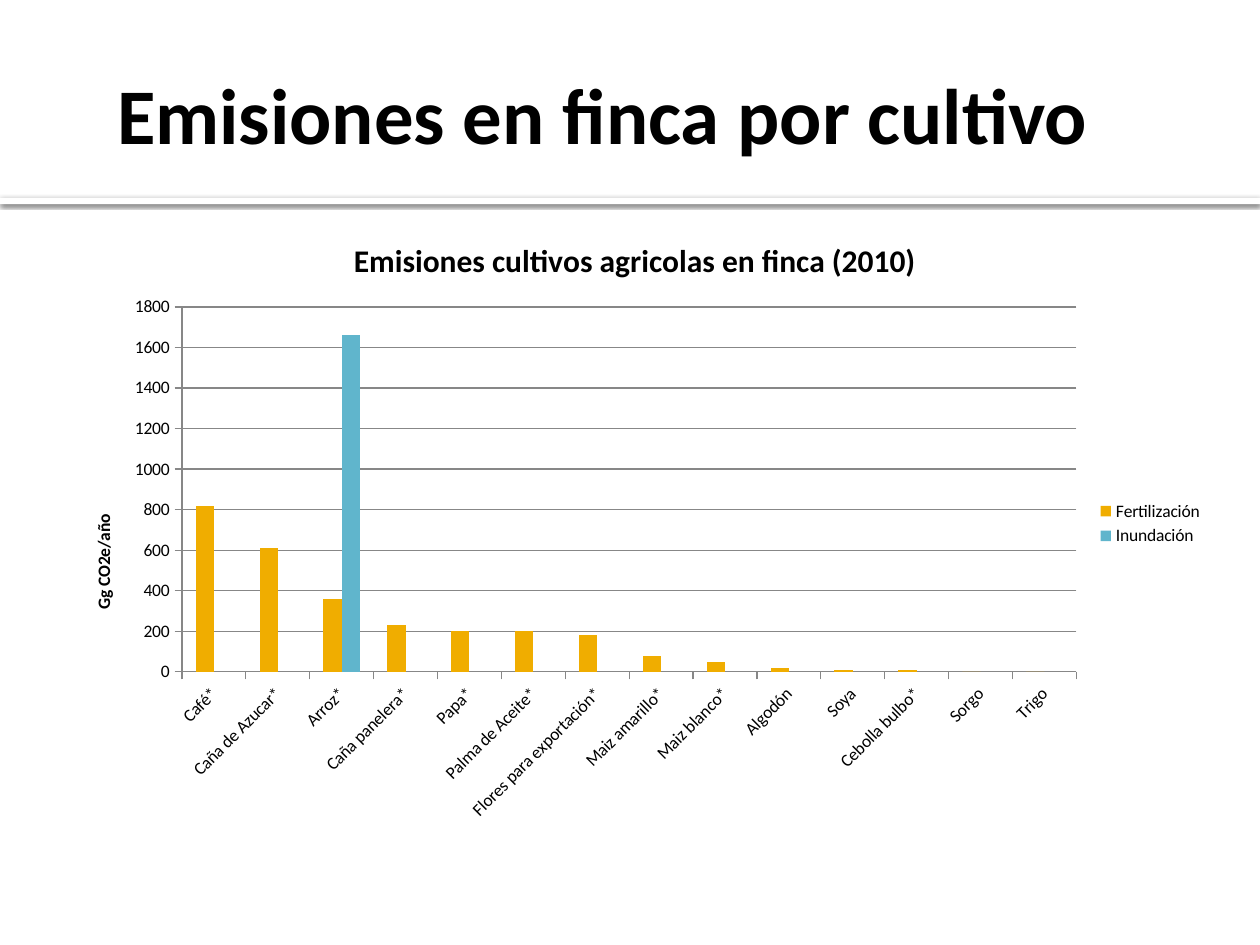
from typing import NamedTuple, Optional

from lxml import etree
from pptx import Presentation
from pptx.chart.data import CategoryChartData
from pptx.dml.color import RGBColor
from pptx.enum.chart import XL_CHART_TYPE, XL_LEGEND_POSITION, XL_TICK_MARK
from pptx.enum.shapes import MSO_SHAPE
from pptx.enum.text import MSO_ANCHOR, PP_ALIGN
from pptx.oxml import parse_xml
from pptx.oxml.ns import nsdecls, qn
from pptx.util import Inches, Pt

COLUMNS = XL_CHART_TYPE.COLUMN_CLUSTERED
RIGHT = XL_LEGEND_POSITION.RIGHT
OUTSIDE = XL_TICK_MARK.OUTSIDE
FONT = "Calibri"
BLACK, WHITE, GRAY = "000000", "FFFFFF", "878787"


class Series(NamedTuple):
    name: str
    values: list[Optional[int]]
    color: str


CROPS = ["Café*", "Caña de Azucar*", "Arroz*", "Caña panelera*", "Papa*",
         "Palma de Aceite*", "Flores para exportación*", "Maiz amarillo*",
         "Maiz blanco*", "Algodón", "Soya", "Cebolla bulbo*", "Sorgo", "Trigo"]
SERIES = [
    Series("Fertilización",
           [820, 610, 360, 230, 200, 200, 180, 80, 50, 20, 10, 10, 0, 0], "F0AD00"),
    Series("Inundación",
           [1660 if crop == "Arroz*" else None for crop in CROPS], "60B5CC"),
]


def rgb(color: str) -> RGBColor:
    return RGBColor.from_string(color)


def style(font, size: float, bold: bool = False) -> None:
    font.name = FONT
    font.size = Pt(size)
    font.bold = bold
    font.color.rgb = rgb(BLACK)


def set_title(owner, text: str, size: float) -> None:
    """Give a chart or an axis its bold title."""
    owner.has_title = True
    title = owner.chart_title if hasattr(owner, "chart_title") else owner.axis_title
    p = title.text_frame.paragraphs[0]
    p.text = text
    style(p.runs[0].font, size, bold=True)


def place(parent, previous=None, **lengths) -> None:
    """Set a manual layout, in fractions of the chart, after the previous child."""
    old = parent.find(qn("c:layout"))
    if old is not None:
        parent.remove(old)
    layout = parse_xml(f"<c:layout {nsdecls('c')}><c:manualLayout/></c:layout>")
    for tag, value in lengths.items():
        etree.SubElement(layout[0], qn(f"c:{tag}")).set("val", str(value))
    if previous is None:
        parent.insert(0, layout)
    else:
        previous.addnext(layout)


def add_band(s) -> None:
    """Draw the white strip whose shadow separates title and chart."""
    sp = s.shapes.add_shape(MSO_SHAPE.RECTANGLE, 0, Inches(1.57), Inches(10), Inches(0.05))
    sp.fill.solid()
    sp.fill.fore_color.rgb = rgb(WHITE)
    sp.line.fill.background()
    sp.shadow.inherit = False
    effects = sp._element.spPr.find(qn("a:effectLst"))
    effects.append(parse_xml(
        f'<a:outerShdw {nsdecls("a")} blurRad="{Pt(2.5)}" dist="{Pt(0.8)}" dir="5400000" '
        'algn="t" rotWithShape="0"><a:srgbClr val="000000"><a:alpha val="60000"/>'
        '</a:srgbClr></a:outerShdw>'))


def add_title(s) -> None:
    sp = s.shapes.title
    sp.left, sp.top, sp.width, sp.height = map(Inches, (0.83, 0.21, 8.17, 1.37))
    tf = sp.text_frame
    tf.text = "Emisiones en finca por cultivo"
    tf.word_wrap = True
    tf.vertical_anchor = MSO_ANCHOR.MIDDLE
    tf.margin_left = Inches(0.1)
    tf.margin_top = tf.margin_right = tf.margin_bottom = Inches(0.05)
    p = tf.paragraphs[0]
    p.alignment = PP_ALIGN.LEFT
    style(p.runs[0].font, 45, bold=True)


def add_emissions_chart(s) -> None:
    data = CategoryChartData(number_format="0")
    data.categories = CROPS
    for series in SERIES:
        data.add_series(series.name, series.values)
    box = map(Inches, (0.43, 1.7, 9.22, 4.91))
    chart = s.shapes.add_chart(COLUMNS, *box, data).chart
    style(chart.font, 10)
    set_title(chart, "Emisiones cultivos agricolas en finca (2010)", 18)

    plot = chart.plots[0]
    plot.gap_width, plot.overlap = 150, 0
    plot.vary_by_categories = False
    for drawn, series in zip(plot.series, SERIES):
        drawn.invert_if_negative = False
        drawn.format.fill.solid()
        drawn.format.fill.fore_color.rgb = rgb(series.color)

    crops, amounts = chart.category_axis, chart.value_axis
    for axis in (crops, amounts):
        axis.major_tick_mark = OUTSIDE
        axis.format.line.color.rgb = rgb(GRAY)
        style(axis.tick_labels.font, 10)
    crops._element.txPr.bodyPr.set("rot", "-2700000")
    amounts.minimum_scale, amounts.maximum_scale, amounts.major_unit = 0, 1800, 200
    amounts.tick_labels.number_format = "0"
    amounts.tick_labels.number_format_is_linked = False
    amounts.major_gridlines.format.line.color.rgb = rgb(GRAY)
    set_title(amounts, "Gg CO2e/año", 10)
    amounts.axis_title.text_frame._txBody.bodyPr.set("rot", "-5400000")

    chart.has_legend = True
    chart.legend.position = RIGHT
    chart.legend.include_in_layout = False
    style(chart.legend.font, 10)

    place(plot._element.getparent(), layoutTarget="inner", xMode="edge", yMode="edge",
          x=0.11, y=0.15, w=0.77, h=0.59)
    title = amounts.axis_title._element
    place(title, title.find(qn("c:tx")), xMode="edge", yMode="edge", x=0.03, y=0.48)


def main() -> None:
    prs = Presentation()
    prs.slide_width, prs.slide_height = Inches(10), Inches(7.5)
    s = prs.slides.add_slide(prs.slide_layouts[5])
    add_band(s)
    add_title(s)
    add_emissions_chart(s)
    prs.save("out.pptx")


if __name__ == "__main__":
    main()
